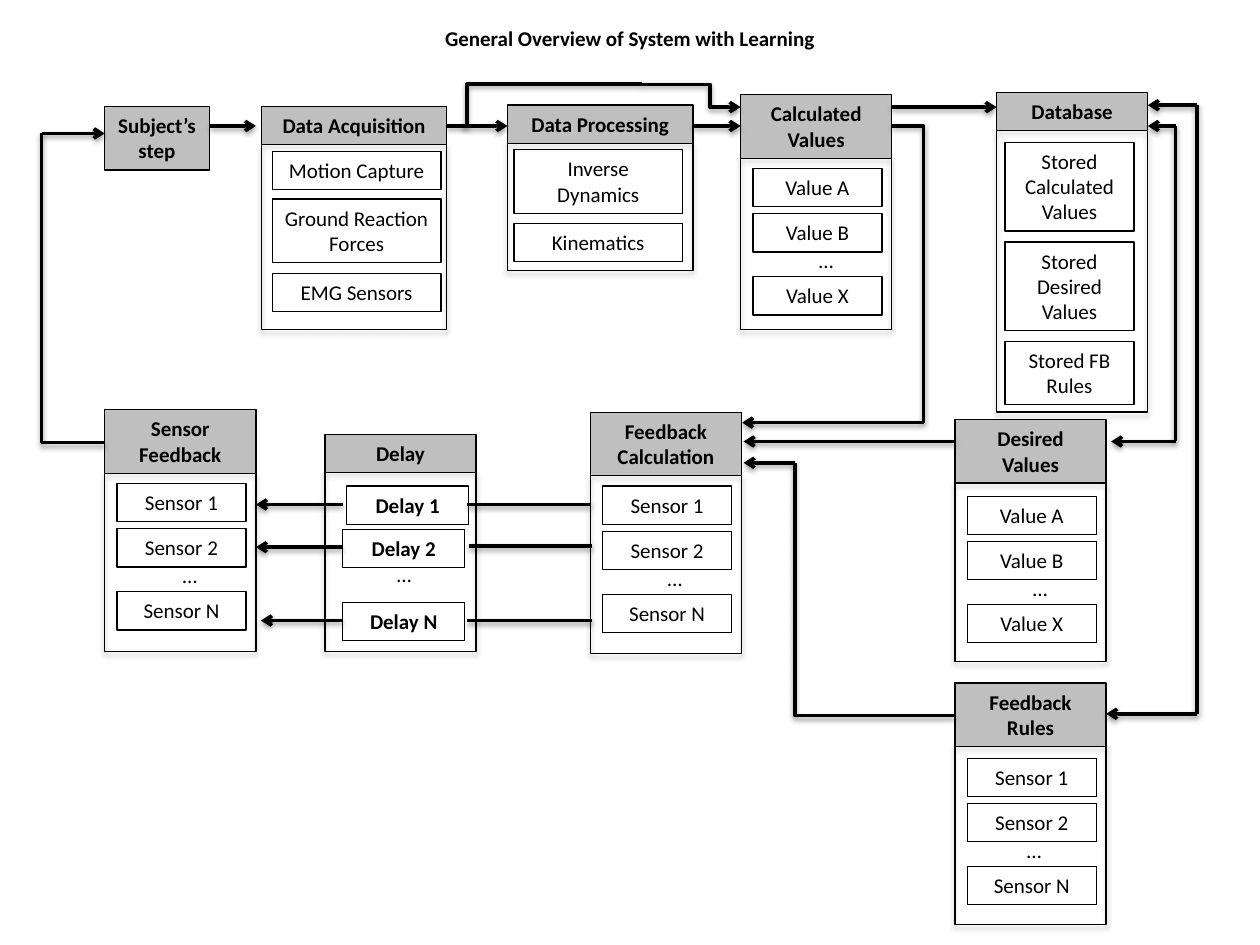
from lxml.etree import SubElement
from pptx import Presentation
from pptx.dml.color import RGBColor
from pptx.enum.shapes import MSO_CONNECTOR, MSO_SHAPE
from pptx.enum.text import MSO_ANCHOR, MSO_AUTO_SIZE, PP_ALIGN
from pptx.oxml.ns import qn
from pptx.util import Cm, Pt

BLACK, GREY = "000000", "BFBFBF"
TITLE = "General Overview of System with Learning"
START = ("Subject’s\nstep", 2.11, 2.15, 2.11)

NARROW, WIDE = 3.05, 3.74
SERIES_STEPS = (0, 0.91, 2.18)
ELLIPSIS_STEP = 1.47


def series(names, top):
    """Return one-line items at the spacing shared by all numbered lists."""
    return [(name, 1, top + step) for name, step in zip(names, SERIES_STEPS)]


SENSORS = ("Sensor 1", "Sensor 2", "Sensor N")
VALUES = ("Value A", "Value B", "Value X")

# title, title lines, left, top, width, bottom, item inset, item width, items
PANELS = [
    ("Data Acquisition", 1, 5.27, 2.15, WIDE, 6.65, 0.22, 3.4,
     [("Motion Capture", 1, 3.05), ("Ground Reaction Forces", 2, 4.01), ("EMG Sensors", 1, 5.51)]),
    ("Data Processing", 1, 10.23, 2.12, WIDE, 5.46, 0.13, 3.4,
     [("Inverse Dynamics", 2, 3.02), ("Kinematics", 1, 4.5)]),
    ("Database", 1, 20.09, 1.86, NARROW, 8.31, 0.17, 2.6,
     [("Stored Calculated Values", 3, 2.87), ("Stored Desired Values", 3, 4.88),
      ("Stored FB Rules", 2, 6.88)]),
    ("Calculated Values", 2, 14.93, 1.91, NARROW, 6.65, 0.25, 2.6, series(VALUES, 3.4)),
    ("Desired\nValues", 2, 19.25, 8.46, NARROW, 13.34, 0.25, 2.6, series(VALUES, 10.01)),
    ("Feedback Calculation", 2, 11.9, 8.31, NARROW, 13.18, 0.25, 2.6, series(SENSORS, 9.8)),
    ("Sensor Feedback", 2, 2.11, 8.26, NARROW, 13.13, 0.25, 2.6, series(SENSORS, 9.75)),
    ("Feedback Rules", 2, 19.25, 13.77, NARROW, 18.64, 0.25, 2.6, series(SENSORS, 15.29)),
    ("Delay", 1, 6.55, 8.76, NARROW, 13.13, 0, 0, []),
]
DELAYS = [("Delay 1", 6.99, 9.8), ("Delay 2", 6.91, 10.67), ("Delay N", 6.91, 12.14)]
ELLIPSES = [(16.26, 4.87), (20.57, 11.48), (13.21, 11.27), (3.43, 11.22),
            (20.45, 16.76), (7.75, 11.2)]

ARROWS = [
    (4.24, 2.54, 5.16, 2.54), (9.32, 2.54, 10.23, 2.54), (13.97, 2.54, 14.93, 2.54),
    (17.98, 2.16, 20.09, 2.16), (18.62, 8.52, 14.96, 8.52), (19.25, 8.9, 14.99, 8.9),
    (16.03, 9.33, 14.99, 9.33), (6.91, 10.17, 5.16, 10.17), (6.91, 11.03, 5.16, 11.03),
    (6.91, 12.51, 5.26, 12.51), (0.84, 2.69, 2.11, 2.69), (23.7, 8.9, 22.4, 8.9),
    (24.13, 14.39, 22.3, 14.39), (24.13, 2.12, 23.14, 2.12), (23.7, 2.54, 23.14, 2.54),
]
PLAIN_LINES = [
    (9.42, 10.17, 11.91, 10.17), (9.45, 11.01, 11.94, 11.01), (9.42, 12.51, 11.94, 12.51),
    (23.7, 8.9, 23.7, 2.54), (24.13, 14.39, 24.13, 2.12),
]
# start, end, share of the width before the turn, arrowhead
ELBOWS = [
    ((9.02, 2.54, 12.95, 1.7), 0.1, False),
    ((12.95, 1.7, 14.93, 2.16), 0.69, True),
    ((17.98, 2.54, 18.62, 8.52), 1, False),
    ((2.11, 8.92, 0.84, 2.69), 1, False),
    ((19.25, 14.43, 16.03, 9.33), 1, False),
]


def colour(value):
    """Turn a hex string into a colour."""
    return RGBColor.from_string(value)


def write(shape, text, *, bold=False, align=PP_ALIGN.CENTER, anchor=MSO_ANCHOR.TOP):
    """Fill a shape with formatted text, one paragraph a line."""
    frame = shape.text_frame
    frame.text = text
    frame.word_wrap = True
    frame.vertical_anchor = anchor
    for paragraph in frame.paragraphs:
        paragraph.alignment = align
        font = paragraph.runs[0].font
        font.name, font.size, font.bold = "Calibri", Pt(12), bold
        font.color.rgb = colour(BLACK)


def cast_shadow(shape, distance, opacity):
    """Give a shape a soft shadow that falls straight down."""
    effects = SubElement(shape._element.spPr, qn("a:effectLst"))
    shadow = SubElement(effects, qn("a:outerShdw"), blurRad=str(Pt(3.1)), dist=str(Pt(distance)),
                        dir="5400000", rotWithShape="0")
    black = SubElement(shadow, qn("a:srgbClr"), val=BLACK)
    SubElement(black, qn("a:alpha"), val=str(opacity * 1000))


def text_height(lines):
    """Return the height in centimetres of a box that holds some lines."""
    return 0.26 + 0.51 * lines


def add_box(slide, left, top, width, height, text="", fill=None, bold=False):
    """Draw a thin-lined rectangle with optional fill and text."""
    box = slide.shapes.add_shape(MSO_SHAPE.RECTANGLE, Cm(left), Cm(top), Cm(width), Cm(height))
    box.line.color.rgb = colour(BLACK)
    box.line.width = Pt(0.75)
    if fill:
        box.fill.solid()
        box.fill.fore_color.rgb = colour(fill)
    else:
        box.fill.background()
    if text:
        box.shadow.inherit = False
        write(box, text, bold=bold)
        box.text_frame.auto_size = MSO_AUTO_SIZE.SHAPE_TO_FIT_TEXT
    else:
        cast_shadow(box, 1.8, 35)
    return box


def add_panel(slide, title, lines, left, top, width, bottom, inset, item_width, items):
    """Draw a header, its body and the items inside."""
    for text, item_lines, item_top in items:
        add_box(slide, left + inset, item_top, item_width, text_height(item_lines), text)
    body_top = top + text_height(lines)
    add_box(slide, left, body_top, width, bottom - body_top)
    add_box(slide, left, top, width, text_height(lines), title, fill=GREY, bold=True)


def add_line(slide, ends, arrow=False, turn=None):
    """Draw a straight line, or an elbow when a turn is given."""
    kind = MSO_CONNECTOR.STRAIGHT if turn is None else MSO_CONNECTOR.ELBOW
    line = slide.shapes.add_connector(kind, *map(Cm, ends))
    line.line.color.rgb = colour(BLACK)
    line.line.width = Pt(2)
    properties = line._element.spPr
    if turn is not None:
        guides = properties.find(qn("a:prstGeom")).find(qn("a:avLst"))
        SubElement(guides, qn("a:gd"), name="adj1", fmla=f"val {round(turn * 100000)}")
    if arrow:
        SubElement(properties.find(qn("a:ln")), qn("a:tailEnd"), type="arrow")
    cast_shadow(line, 1.6, 38)


def main():
    """Build the system overview slide."""
    presentation = Presentation()
    presentation.slide_width, presentation.slide_height = Cm(25.4), Cm(19.05)
    slide = presentation.slides.add_slide(presentation.slide_layouts[5])
    title = slide.shapes.title
    title.left, title.top, title.width, title.height = map(Cm, (1.27, 0.2, 22.86, 1.14))
    write(title, TITLE, bold=True, anchor=MSO_ANCHOR.MIDDLE)

    text, left, top, width = START
    add_box(slide, left, top, width, text_height(2), text, fill=GREY, bold=True)
    for panel in PANELS:
        add_panel(slide, *panel)
    for text, left, top in DELAYS:
        add_box(slide, left, top, 2.46, text_height(1), text, bold=True)
    for left, top in ELLIPSES:
        box = slide.shapes.add_textbox(Cm(left), Cm(top), Cm(0.61), Cm(1.28))
        write(box, "…", align=PP_ALIGN.LEFT)
    for ends in ARROWS:
        add_line(slide, ends, arrow=True)
    for ends in PLAIN_LINES:
        add_line(slide, ends)
    for ends, turn, arrow in ELBOWS:
        add_line(slide, ends, arrow, turn)
    presentation.save("out.pptx")


if __name__ == "__main__":
    main()
